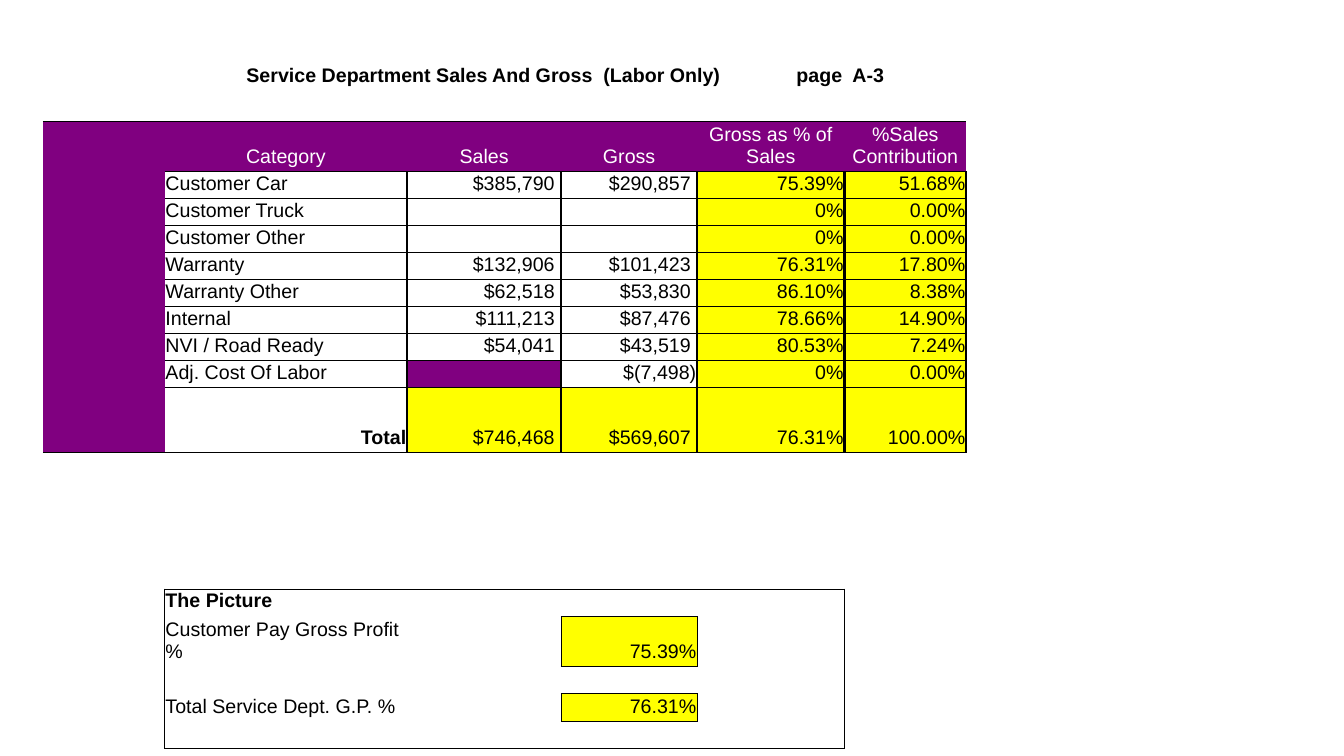
from dataclasses import dataclass

from lxml import etree
from pptx import Presentation
from pptx import util as u
from pptx.dml.color import RGBColor
from pptx.enum import text
from pptx.oxml import ns


@dataclass(frozen=True)
class Theme:
    font: str = "Arial"
    size: int = 14
    empty_size: int = 10
    ink: str = "000000"
    white: str = "FFFFFF"
    purple: str = "800080"
    yellow: str = "FFFF00"
    hairline: float = 0.5
    thin: float = 1
    thick: float = 2


theme = Theme()
LEFT, CENTER, RIGHT = text.PP_ALIGN.LEFT, text.PP_ALIGN.CENTER, text.PP_ALIGN.RIGHT
NO_GRID_STYLE = "{2D5ABB26-0587-4C30-8999-92F81FD0307C}"
NEIGHBOURS = {"L": (0, -1, "R"), "R": (0, 1, "L"), "T": (-1, 0, "B"), "B": (1, 0, "T")}

headings = ["Category", "Sales", "Gross", "Gross as % of Sales", "%Sales Contribution"]
records = [
    ["Customer Car", "$385,790", "$290,857", "75.39%", "51.68%"],
    ["Customer Truck", "", "", "0%", "0.00%"],
    ["Customer Other", "", "", "0%", "0.00%"],
    ["Warranty", "$132,906", "$101,423", "76.31%", "17.80%"],
    ["Warranty Other", "$62,518", "$53,830", "86.10%", "8.38%"],
    ["Internal", "$111,213", "$87,476", "78.66%", "14.90%"],
    ["NVI / Road Ready", "$54,041", "$43,519", "80.53%", "7.24%"],
    ["Adj. Cost Of Labor", "", "$(7,498)", "0%", "0.00%"],
    ["Total", "$746,468", "$569,607", "76.31%", "100.00%"],
]
ratios = [(18, "Customer Pay Gross Profit %", "75.39%"), (20, "Total Service Dept. G.P. %", "76.31%")]
header_row, first_row, total_row = 2, 3, 11
box_top, box_bottom = 17, 21

column_widths = [3.07, 6.11, 3.88, 3.43, 3.71, 3.07]
row_heights = [0.68, 0.78, 1.26] + [0.68] * 8 + [1.64] + [0.69] * 6 + [1.26] + [0.69] * 3

presentation = Presentation()
presentation.slide_width, presentation.slide_height = u.Cm(33.87), u.Cm(19.05)
slide = presentation.slides.add_slide(presentation.slide_layouts[6])
shape = slide.shapes.add_table(
    len(row_heights), len(column_widths), u.Cm(1.08), u.Cm(1.6),
    u.Cm(sum(column_widths)), u.Cm(sum(row_heights)))
table = shape.table
table.first_row = table.horz_banding = False
table._tbl.tblPr.find(ns.qn("a:tableStyleId")).text = NO_GRID_STYLE
for column, width in zip(table.columns, column_widths):
    column.width = u.Cm(width)
for row, height in zip(table.rows, row_heights):
    row.height = u.Cm(height)

borders = {}


def rule(row, column, **widths):
    for side, width in widths.items():
        down, across, opposite = NEIGHBOURS[side]
        borders.setdefault((row, column), {})[side] = width
        borders.setdefault((row + down, column + across), {})[opposite] = width


def write(row, column, words, align=LEFT, color=theme.ink, bold=False):
    paragraph = table.cell(row, column).text_frame.paragraphs[0]
    paragraph.alignment = align
    run = paragraph.add_run()
    run.text = words
    formats = {"name": theme.font, "size": u.Pt(theme.size), "bold": bold}
    for name, value in formats.items():
        setattr(run.font, name, value)
    run.font.color.rgb = RGBColor.from_string(color)


fills = {(row, 0): theme.purple for row in range(header_row, total_row + 1)}
fills[total_row - 1, 2] = theme.purple

margins = {"margin_left": 0.02, "margin_top": 0.02, "margin_right": 0.02, "margin_bottom": 0.09}
for row in range(len(row_heights)):
    for column in range(len(column_widths)):
        cell = table.cell(row, column)
        cell.vertical_anchor = text.MSO_ANCHOR.BOTTOM
        for name, value in margins.items():
            setattr(cell, name, u.Cm(value))

title = table.cell(0, 1)
title.merge(table.cell(0, 5))
title.margin_left = u.Cm(2.06)
properties = title.text_frame.paragraphs[0]._p.get_or_add_pPr()
tabs = etree.SubElement(properties, ns.qn("a:tabLst"))
etree.SubElement(tabs, ns.qn("a:tab"), pos=str(u.Cm(13.86)), algn="l")
write(0, 1, "Service Department Sales And Gross  (Labor Only)\tpage  A-3", bold=True)

rule(header_row, 0, T=theme.thin)
for column, heading in enumerate(headings, 1):
    write(header_row, column, heading, CENTER, theme.white)
    fills[header_row, column] = theme.purple
    rule(header_row, column, T=theme.thin, B=theme.hairline)

for row, record in enumerate(records, first_row):
    is_total = row == total_row
    for column, words in enumerate(record, 1):
        is_label = column == 1
        if words:
            write(row, column, words, LEFT if is_label and not is_total else RIGHT,
                  bold=is_label and is_total)
        if words.startswith("$") and not words.endswith(")"):
            table.cell(row, column).margin_right = u.Cm(0.16)
        if column > 3 or is_total and not is_label:
            fills[row, column] = theme.yellow
        rule(row, column, T=theme.hairline, R=theme.thick,
             B=theme.thin if is_total else theme.hairline)
rule(total_row, 0, B=theme.thin)

write(box_top, 1, "The Picture", bold=True)
table.cell(box_top, 1).vertical_anchor = text.MSO_ANCHOR.TOP
for row in range(box_top, box_bottom + 1):
    rule(row, 1, L=theme.thin)
    rule(row, 4, R=theme.thin)
for column in range(1, 5):
    rule(box_top, column, T=theme.thin)
    rule(box_bottom, column, B=theme.thin)
for row, label, ratio in ratios:
    write(row, 1, label)
    write(row, 3, ratio, RIGHT)
    fills[row, 3] = theme.yellow
    rule(row, 3, **dict.fromkeys("LTRB", theme.hairline))

for row in range(len(row_heights)):
    for column in range(len(column_widths)):
        cell = table.cell(row, column)
        paragraph = cell.text_frame.paragraphs[0]
        if not paragraph.runs:
            etree.SubElement(paragraph._p, ns.qn("a:endParaRPr"), sz=str(theme.empty_size * 100))
        if (row, column) in fills:
            cell.fill.solid()
            cell.fill.fore_color.rgb = RGBColor.from_string(fills[row, column])
        else:
            cell.fill.background()
        sides = borders.get((row, column), {})
        for index, side in enumerate("LRTB"):
            line = etree.Element(ns.qn(f"a:ln{side}"))
            if side in sides:
                line.set("w", str(u.Pt(sides[side])))
                solid = etree.SubElement(line, ns.qn("a:solidFill"))
                etree.SubElement(solid, ns.qn("a:srgbClr"), val=theme.ink)
            else:
                etree.SubElement(line, ns.qn("a:noFill"))
            cell._tc.get_or_add_tcPr().insert(index, line)

presentation.save("out.pptx")
